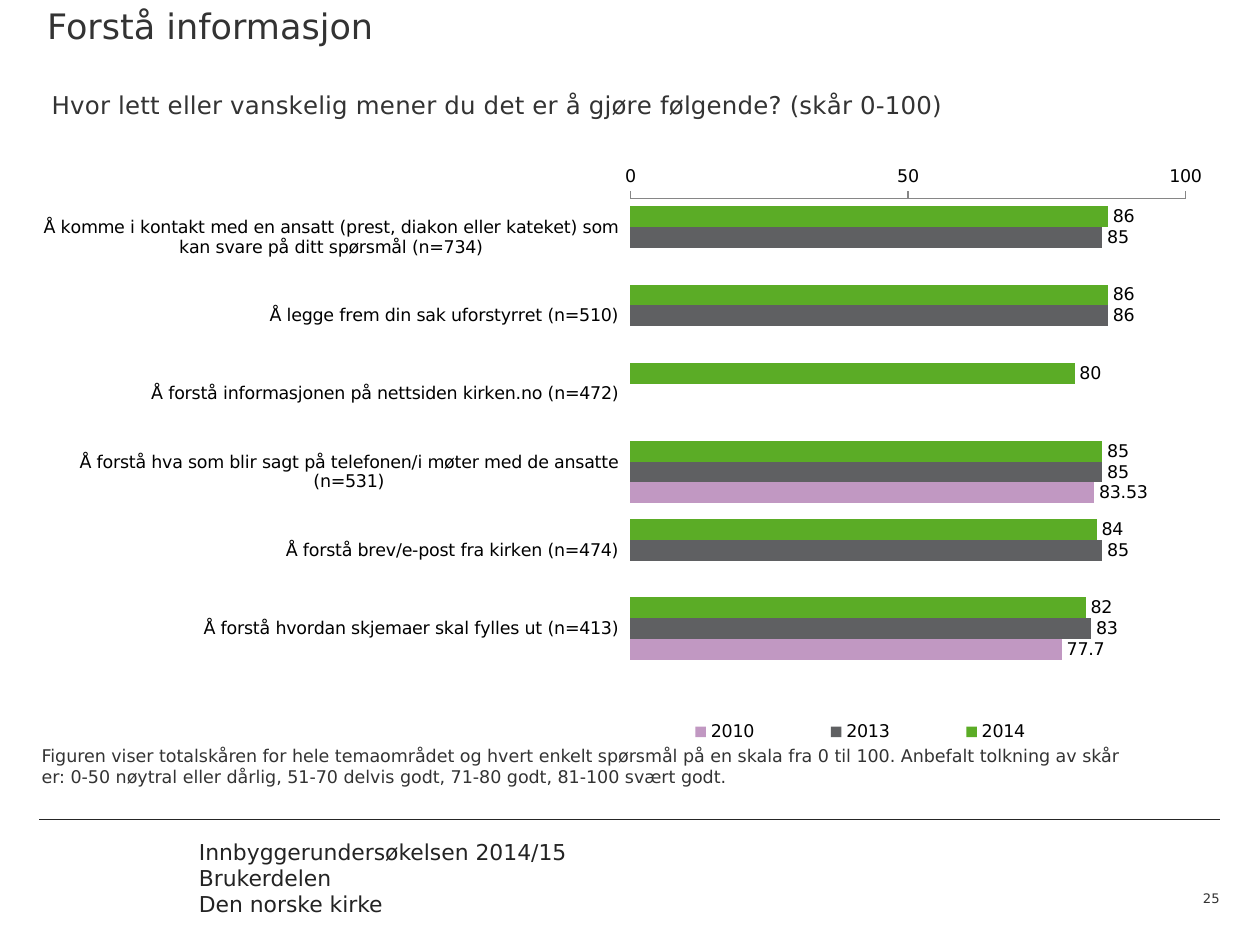
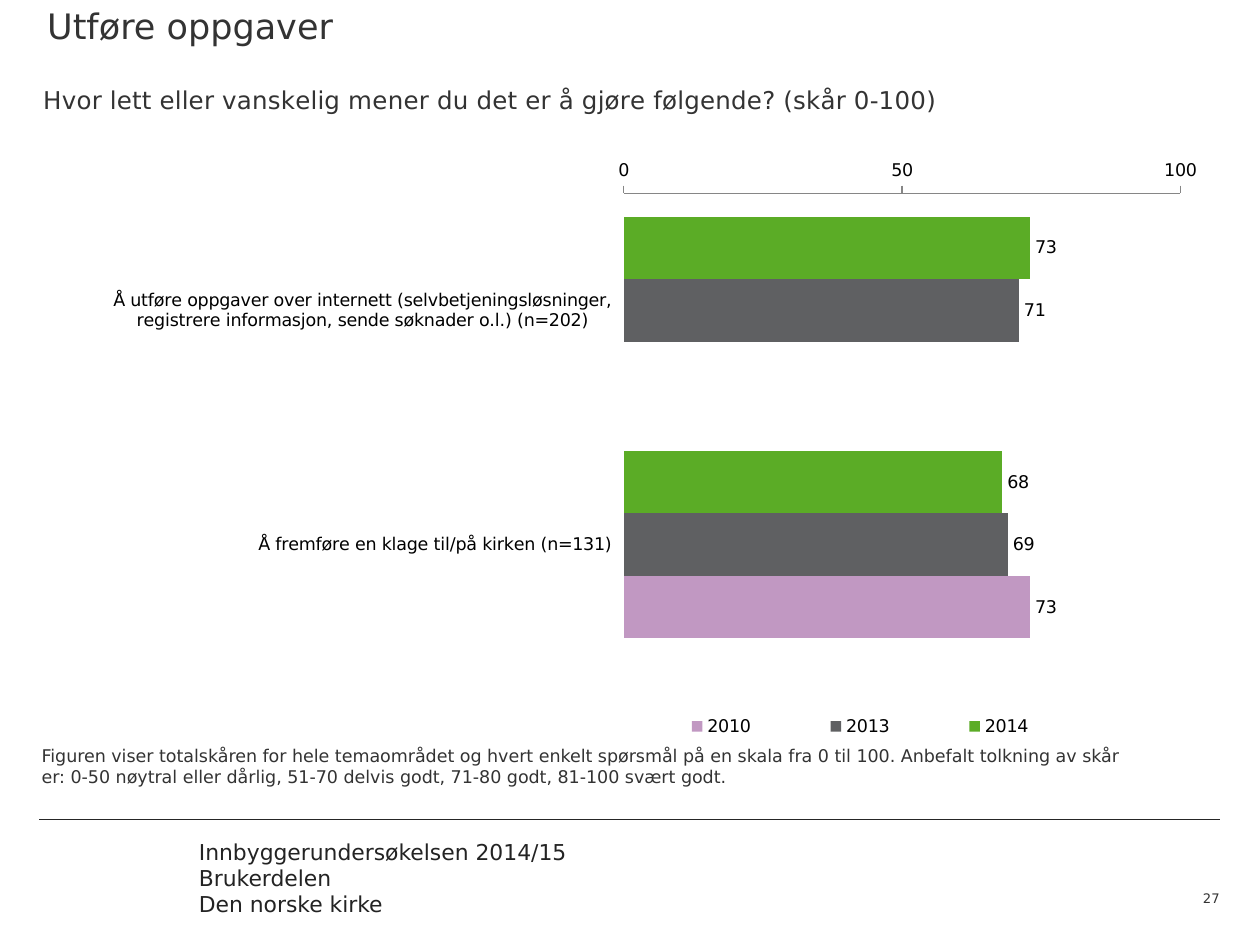
from lxml import etree
from pptx import Presentation
from pptx import util as u
from pptx.chart.data import CategoryChartData
from pptx.dml.color import RGBColor
from pptx.enum import chart as charts, shapes, text
from pptx.oxml import ns

FONT = "DejaVu Sans"
INK, FOOTER_INK, RULE, AXIS, CHART_INK = "333333", "232323", "262626", "868686", "000000"
SERIES_COLOURS = {"2014": "5BAC26", "2013": "5F6062", "2010": "C198C2"}
WHOLE = "#,##0"
PLOT = (0.495, 0.171, 0.471, 0.698)
QUESTION = "Hvor lett eller vanskelig mener du det er å gjøre følgende? (skår 0-100)"
READING_GUIDE = (
    "Figuren viser totalskåren for hele temaområdet og hvert enkelt spørsmål på en skala "
    "fra 0 til 100. Anbefalt tolkning av skår",
    "er: 0-50 nøytral eller dårlig, 51-70 delvis godt, 71-80 godt, 81-100 svært godt.",
)
FOOTER = ("Innbyggerundersøkelsen 2014/15 Brukerdelen", "Den norske kirke")

SCORE_SLIDES = [
    {
        "title": "Forstå informasjon",
        "number": "25",
        "box": (0.88, 1.69, 23.83, 13.54),
        "legend": (0.49, 0.94, 0.4, 0.05),
        "decimal_series": "2010",
        "categories": [
            "Å komme i kontakt med en ansatt (prest, diakon eller kateket) som kan svare på ditt spørsmål (n=734)",
            "Å legge frem din sak uforstyrret (n=510)",
            "Å forstå informasjonen på nettsiden kirken.no (n=472)",
            "Å forstå hva som blir sagt på telefonen/i møter med de ansatte (n=531)",
            "Å forstå brev/e-post fra kirken (n=474)",
            "Å forstå hvordan skjemaer skal fylles ut (n=413)",
        ],
        "scores": {
            "2014": (86, 86, 80, 85, 84, 82),
            "2013": (85, 86, None, 85, 85, 83),
            "2010": (None, None, None, 83.53, None, 77.7),
        },
    },
    {
        "title": "Utføre oppgaver",
        "number": "27",
        "box": (0.78, 1.58, 23.83, 13.54),
        "legend": (0.49, 0.94, 0.41, 0.05),
        "decimal_series": None,
        "categories": [
            "Å utføre oppgaver over internett (selvbetjeningsløsninger, registrere informasjon, sende søknader o.l.) (n=202)",
            "Å fremføre en klage til/på kirken (n=131)",
        ],
        "scores": {"2014": (73, 68), "2013": (71, 69), "2010": (None, 73)},
    },
]


def colour(value):
    """Turn a hex string into a colour."""
    return RGBColor.from_string(value)


def set_font(font, size, value):
    """Apply the deck font with a size and colour."""
    font.name, font.size = FONT, u.Pt(size)
    font.color.rgb = colour(value)


def fill_text(frame, lines, size, value, align=text.PP_ALIGN.LEFT,
              anchor=text.MSO_ANCHOR.TOP, top=0):
    """Write one paragraph per line in a wrapped frame without side margins."""
    frame.word_wrap = True
    frame.auto_size = text.MSO_AUTO_SIZE.NONE
    frame.vertical_anchor = anchor
    frame.margin_left = frame.margin_right = frame.margin_bottom = 0
    frame.margin_top = u.Cm(top)
    for index, line in enumerate(lines):
        paragraph = frame.add_paragraph() if index else frame.paragraphs[0]
        paragraph.alignment = align
        run = paragraph.add_run()
        run.text = line
        set_font(run.font, size, value)


def add_text(slide, box, lines, size, value, **options):
    """Add a text box at a box given in centimetres."""
    shape = slide.shapes.add_textbox(*map(u.Cm, box))
    fill_text(shape.text_frame, lines, size, value, **options)


def add_title(slide, box, title):
    """Place and format the title placeholder."""
    shape = slide.shapes.title
    shape.left, shape.top, shape.width, shape.height = map(u.Cm, box)
    fill_text(shape.text_frame, [title], 20, INK, top=0.1)


def add_footer(slide, box, number):
    """Add the rule, survey name and page number."""
    left, top, width, height = box
    rule = slide.shapes.add_connector(
        shapes.MSO_CONNECTOR.STRAIGHT, *map(u.Cm, (left, top, left + width, top)))
    rule.line.color.rgb = colour(RULE)
    rule.line.width = u.Pt(0.75)
    etree.SubElement(rule._element.spPr, ns.qn("a:effectLst"))
    add_text(slide, (left + 3.22, top + 0.38, 8.41, 1.6), FOOTER, 12.5, FOOTER_INK)
    add_text(slide, (left + width - 1.4, top + height - 0.71, 1.4, 0.71), [number], 7.5, INK,
             align=text.PP_ALIGN.RIGHT, anchor=text.MSO_ANCHOR.BOTTOM)


def set_layout(parent, index, position, inner=False):
    """Fix a chart part at fractions of the chart area."""
    for old in parent.findall(ns.qn("c:layout")):
        parent.remove(old)
    layout = etree.Element(ns.qn("c:layout"))
    parent.insert(index, layout)
    manual = etree.SubElement(layout, ns.qn("c:manualLayout"))
    settings = [("layoutTarget", "inner")] if inner else []
    settings += [("xMode", "edge"), ("yMode", "edge"), *zip("xywh", position)]
    for name, value in settings:
        etree.SubElement(manual, ns.qn(f"c:{name}"), val=str(value))


def style_axes(chart):
    """Format the reversed category axis and the 0-100 score axis."""
    categories, scores = chart.category_axis, chart.value_axis
    categories.reverse_order = True
    categories.format.line.fill.background()
    scores.minimum_scale, scores.maximum_scale, scores.major_unit = 0, 100, 50
    scores.format.line.color.rgb = colour(AXIS)
    for axis in (categories, scores):
        axis.has_major_gridlines = False
        axis.major_tick_mark = charts.XL_TICK_MARK.OUTSIDE
        axis.minor_tick_mark = charts.XL_TICK_MARK.NONE
        set_font(axis.tick_labels.font, 10, CHART_INK)


def style_bars(plot, decimal_series):
    """Colour the bars and label them with their scores."""
    plot.gap_width, plot.overlap = 75, 0
    plot.vary_by_categories = False
    for series in plot.series:
        series.format.fill.solid()
        series.format.fill.fore_color.rgb = colour(SERIES_COLOURS[series.name])
        labels = series.data_labels
        labels.show_value = True
        labels.position = charts.XL_LABEL_POSITION.OUTSIDE_END
        labels.number_format = "General" if series.name == decimal_series else WHOLE
        labels.number_format_is_linked = False
        set_font(labels.font, 10, CHART_INK)


def add_score_chart(slide, content):
    """Add the clustered bar chart with its question and legend."""
    data = CategoryChartData()
    data.categories = content["categories"]
    for year, scores in content["scores"].items():
        data.add_series(year, scores)
    chart = slide.shapes.add_chart(
        charts.XL_CHART_TYPE.BAR_CLUSTERED, *map(u.Cm, content["box"]), data).chart
    set_font(chart.font, 12, CHART_INK)
    chart.has_title = True
    run = chart.chart_title.text_frame.paragraphs[0].add_run()
    run.text = QUESTION
    set_font(run.font, 14, INK)
    run.font.bold = False
    style_axes(chart)
    style_bars(chart.plots[0], content["decimal_series"])
    chart.has_legend = True
    chart.legend.position = charts.XL_LEGEND_POSITION.RIGHT
    chart.legend.include_in_layout = False
    set_font(chart.legend.font, 10, CHART_INK)
    set_layout(chart.chart_title._element, 1, (0, 0))
    set_layout(chart.legend._element, 1, content["legend"])
    set_layout(chart._chartSpace.chart.plotArea, 0, PLOT, inner=True)


def add_score_slide(presentation, content):
    """Build one slide with a title, score chart, reading guide and footer."""
    slide = presentation.slides.add_slide(presentation.slide_layouts[5])
    add_score_chart(slide, content)
    add_text(slide, (0.84, 15.02, 23.77, 1.04), READING_GUIDE, 10, INK)
    add_title(slide, (0.95, 0, 23.8, 3.1), content["title"])
    add_footer(slide, (0.79, 16.52, 23.8, 1.75), content["number"])


def main():
    """Build and save the presentation."""
    presentation = Presentation()
    presentation.slide_width, presentation.slide_height = u.Cm(25.4), u.Cm(19.05)
    for content in SCORE_SLIDES:
        add_score_slide(presentation, content)
    presentation.save("out.pptx")


if __name__ == "__main__":
    main()
